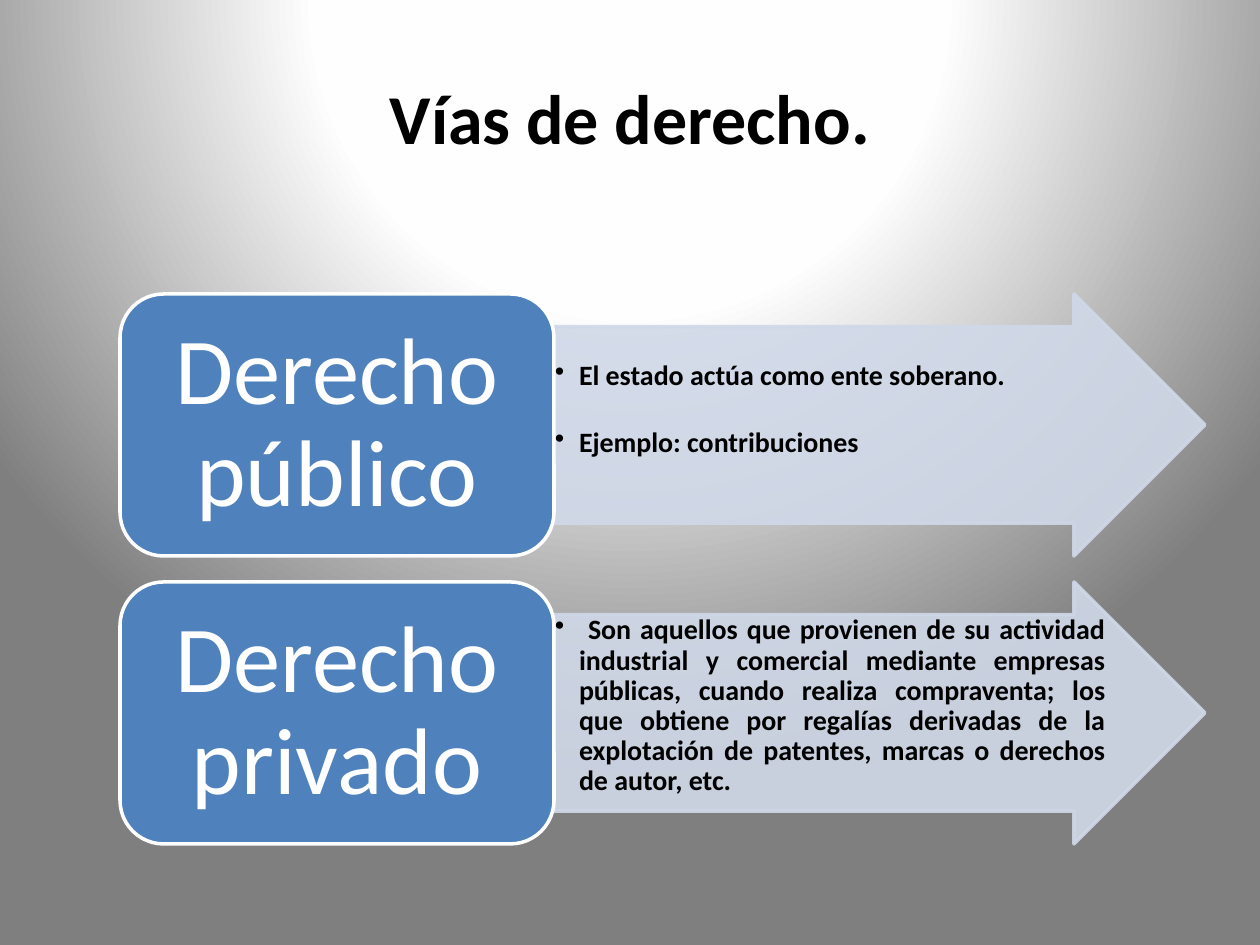
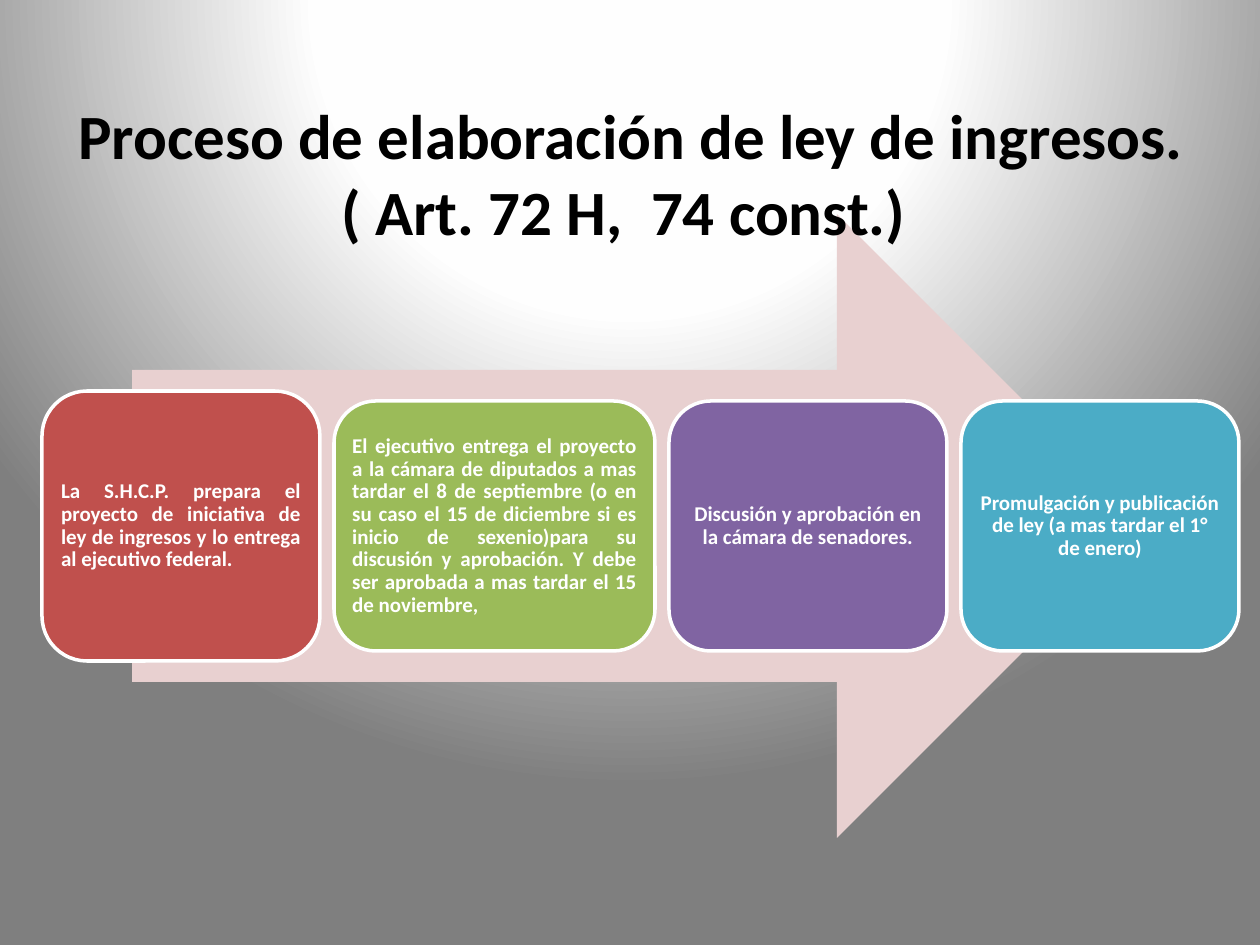
from pptx import Presentation
from pptx.dml.color import RGBColor as Rgb
from pptx.enum.shapes import MSO_SHAPE as Kind
from pptx.enum.text import MSO_ANCHOR as Anchor, PP_ALIGN as Align
from pptx.oxml import parse_xml
from pptx.oxml.ns import nsdecls
from pptx.oxml.xmlchemy import OxmlElement as Node
from pptx.util import Pt

# Content
WAYS = {
    "title": ("Vías de derecho.", 40, (63, 38, 1134, 158)),
    "rows": [
        ("Derecho público", Align.LEFT, 35,
         ["El estado actúa como ente soberano.",
          "Ejemplo: contribuciones"]),
        ("Derecho privado", Align.JUSTIFY, 1,
         [" Son aquellos que provienen de su actividad industrial y comercial "
          "mediante empresas públicas, cuando realiza compraventa; los que "
          "obtiene por regalías derivadas de la explotación de patentes, "
          "marcas o derechos de autor, etc."]),
    ],
}
LAW = {
    "title": ("Proceso de elaboración de ley de ingresos.\v"
              "( Art. 72 H,  74 const.) ", 36, (64, 86, 1134, 173)),
    "steps": [
        ("La S.H.C.P. prepara el proyecto de iniciativa de ley de ingresos y "
         "lo entrega al ejecutivo federal.",
         "red", Align.JUSTIFY, 278, 270),
        ("El ejecutivo entrega el proyecto a la cámara de diputados a mas "
         "tardar el 8 de septiembre (o en su caso el 15 de diciembre si es "
         "inicio de sexenio)para su discusión y aprobación. Y debe ser "
         "aprobada a mas tardar el 15 de noviembre,",
         "green", Align.JUSTIFY, 321, 250),
        ("Discusión y aprobación en la cámara de senadores.",
         "purple", Align.CENTER, 278, 250),
        ("Promulgación y publicación de ley (a mas tardar el 1° de enero)",
         "teal", Align.CENTER, 278, 250),
    ],
}

# Shared look
FONT = "Calibri"
HUES = {"black": "000000", "white": "FFFFFF", "blue": "4F81BD",
        "pale": "D0D8E8", "pink": "E8D0D0", "red": "C0504D",
        "green": "9BBB59", "purple": "8064A2", "teal": "4BACC6"}
STOPS = [(0, "FFFFFF"), (40, "FEFEFE"), (100, "7F7F7F")]
SCALE = 914400 / 126


def px(n):
    return round(n * SCALE)


def hue(name):
    return Rgb.from_string(HUES[name])


def glow(master):
    """Give every slide the round grey gradient."""
    stops = "".join(f'<a:gs pos="{at * 1000}"><a:srgbClr val="{tone}"/></a:gs>'
                    for at, tone in STOPS)
    page = master.element.cSld
    if page.bg is not None:
        page.remove(page.bg)
    page.insert(0, parse_xml(
        f'<p:bg {nsdecls("p", "a")}><p:bgPr><a:gradFill rotWithShape="1">'
        f'<a:gsLst>{stops}</a:gsLst><a:path path="circle">'
        '<a:fillToRect l="50000" t="-80000" r="50000" b="180000"/></a:path>'
        '</a:gradFill><a:effectLst/></p:bgPr></p:bg>'))


def write(shape, lines, size, tone, align, bold=True, pad=None,
          anchor=Anchor.MIDDLE, tight=True):
    """Fill a shape with styled text; pad is left/right and top insets."""
    frame = shape.text_frame
    frame.word_wrap = True
    frame.vertical_anchor = anchor
    if pad:
        side, top = pad
        frame.margin_left = frame.margin_right = px(side)
        frame.margin_top = px(top)
        frame.margin_bottom = px(min(side, top))
    frame.text = "\n".join(lines)
    for par in frame.paragraphs:
        par.alignment = align
        if tight:
            par.line_spacing = 0.9
        for run in par.runs:
            font = run.font
            font.name, font.size, font.bold = FONT, Pt(size), bold
            font.color.rgb = hue(tone)
    return frame


def draw(slide, kind, box, fill, edge=None):
    shape = slide.shapes.add_shape(kind, *map(px, box))
    shape.shadow.inherit = False
    shape.fill.solid()
    shape.fill.fore_color.rgb = hue(fill)
    if edge:
        shape.line.color.rgb = hue(edge)
        shape.line.width = Pt(2)
    else:
        shape.line.fill.background()
    return shape


def fade(shape, share):
    for tone in shape.element.spPr.iter("{*}srgbClr"):
        alpha = Node("a:alpha")
        alpha.set("val", str(share * 1000))
        tone.append(alpha)


def dot(par, gap):
    """Turn a paragraph into a bullet with a hanging indent."""
    props = par._p.get_or_add_pPr()
    props.set("marL", str(px(gap)))
    props.set("indent", str(-px(gap)))
    mark = Node("a:buChar")
    mark.set("char", "•")
    props.append(mark)


def head(slide, text, size, box):
    area = slide.shapes.add_textbox(*map(px, box))
    write(area, [text], size, "black", Align.CENTER, tight=False)


def ways(slide):
    left, top, wide, high, pitch = 120, 294, 434, 262, 288
    for i, (name, align, drop, notes) in enumerate(WAYS["rows"]):
        y = top + i * pitch
        # Arrow with its notes
        arrow = draw(slide, Kind.RIGHT_ARROW, (left + wide, y, 651, high),
                     "pale", "pale")
        arrow.adjustments[0] = 0.75
        fade(arrow, 90)
        frame = write(arrow, notes, 16, "black", align,
                      pad=(1, drop), anchor=Anchor.TOP)
        for j, par in enumerate(frame.paragraphs):
            if j:
                par.space_before = Pt(21)
            dot(par, 24)
        # Name box
        card = draw(slide, Kind.ROUNDED_RECTANGLE, (left, y, wide, high),
                    "blue", "white")
        write(card, [name], 54, "white", Align.CENTER, False, (29, 14))
    head(slide, *WAYS["title"])


def law(slide):
    draw(slide, Kind.RIGHT_ARROW, (132, 214, 1017, 624), "pink")
    x, mid, gap = 42, 526, 14
    for text, fill, align, wide, high in LAW["steps"]:
        card = draw(slide, Kind.ROUNDED_RECTANGLE,
                    (x, mid - high / 2, wide, high), fill, "white")
        write(card, [text], 12, "white", align, pad=(6, 6))
        x += wide + gap
    head(slide, *LAW["title"])


def main():
    deck = Presentation()
    deck.slide_width, deck.slide_height = px(1260), px(945)
    glow(deck.slide_master)
    for build in (ways, law):
        build(deck.slides.add_slide(deck.slide_layouts[6]))
    deck.save("out.pptx")


if __name__ == "__main__":
    main()
